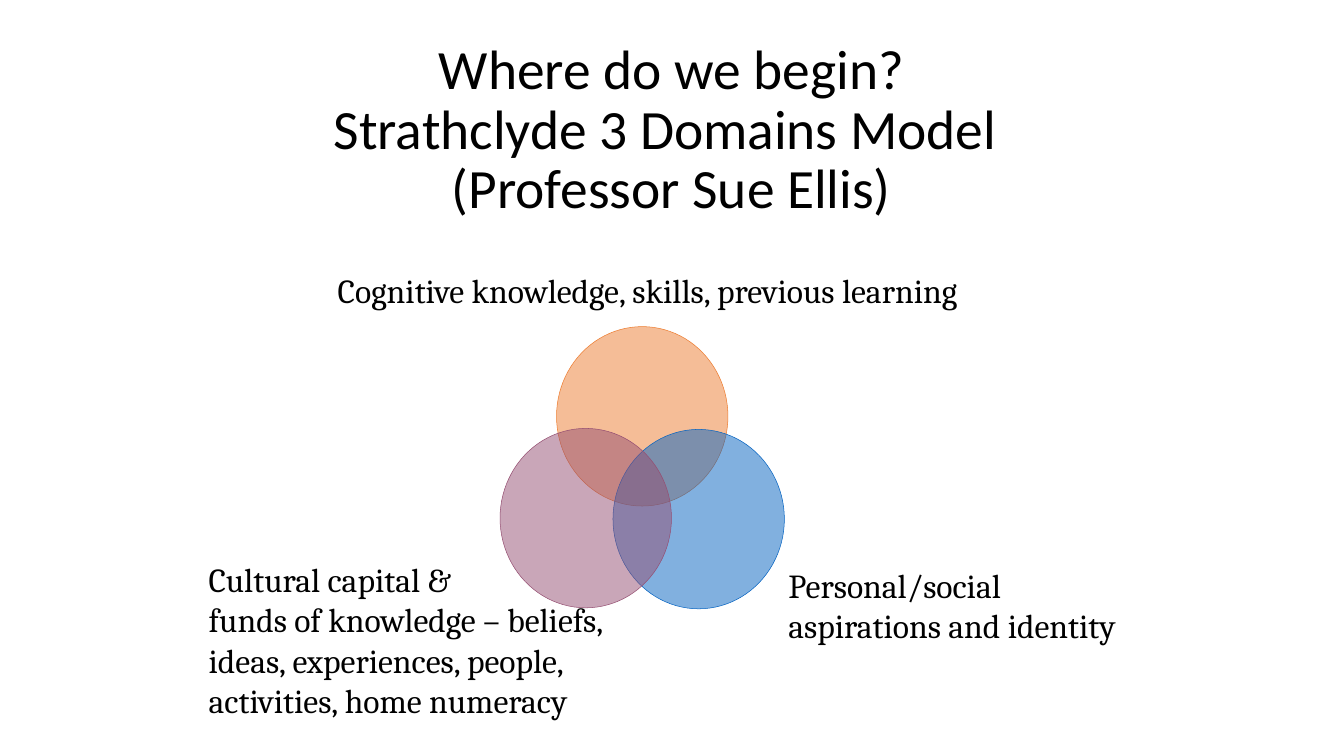
from lxml import etree
from pptx import Presentation
from pptx.dml.color import RGBColor
from pptx.enum.shapes import MSO_SHAPE as Shape
from pptx.enum.text import MSO_ANCHOR as Anchor, PP_ALIGN as Align
from pptx.oxml.ns import qn
from pptx.util import Inches, Pt

# Content
TITLE = ["Where do we begin?", "Strathclyde 3 Domains Model ", "(Professor Sue Ellis)"]
TITLE_BOX = (0.59, 0.81, 12.14, 0.98)
CIRCLE_SIZE = (1.7, 1.78)
# Each domain: colour, circle corner, label box, label lines
DOMAINS = [
    ("ED7D31", (5.52, 3.24), (3.35, 2.63, 6.4, 0.5),
     ["Cognitive knowledge, skills, previous learning"]),
    ("0563C1", (6.08, 4.26), (7.82, 5.44, 3.42, 1.13),
     ["Personal/social", "aspirations and identity"]),
    ("954F72", (4.96, 4.25), (2.07, 5.68, 4.2, 1.33),
     ["Cultural capital &", "funds of knowledge – beliefs,",
      "ideas, experiences, people,", "activities, home numeracy"]),
]


def color(hex_string):
    return RGBColor.from_string(hex_string)


def add_text(slide, box, lines, font, size, align=Align.LEFT, spacing=1.0):
    frame = slide.shapes.add_textbox(*map(Inches, box)).text_frame
    frame.word_wrap = True
    frame.vertical_anchor = Anchor.MIDDLE
    frame.margin_left = frame.margin_right = 0
    frame.margin_top = frame.margin_bottom = 0
    for index, line in enumerate(lines):
        paragraph = frame.add_paragraph() if index else frame.paragraphs[0]
        paragraph.alignment = align
        paragraph.line_spacing = spacing
        run = paragraph.add_run()
        run.text = line
        run.font.name = font
        run.font.size = Pt(size)
        run.font.color.rgb = color("000000")


def add_circle(slide, corner, fill):
    circle = slide.shapes.add_shape(Shape.OVAL, *map(Inches, corner + CIRCLE_SIZE))
    circle.shadow.inherit = False
    circle.fill.solid()
    circle.fill.fore_color.rgb = color(fill)
    circle.line.color.rgb = color(fill)
    circle.line.width = Pt(0.37)
    # Half-transparent fill
    fill_color = circle.fill._xPr.find(qn("a:solidFill"))[0]
    etree.SubElement(fill_color, qn("a:alpha")).set("val", "50000")


def main():
    presentation = Presentation()
    presentation.slide_width = Inches(13.33)
    presentation.slide_height = Inches(7.5)
    slide = presentation.slides.add_slide(presentation.slide_layouts[6])

    # Title
    add_text(slide, TITLE_BOX, TITLE, "Calibri", 39.6, Align.CENTER, 0.9)

    # Overlapping domains with their labels
    for fill, corner, label_box, label in DOMAINS:
        add_circle(slide, corner, fill)
        add_text(slide, label_box, label, "Cambria", 24)

    presentation.save("out.pptx")


if __name__ == "__main__":
    main()
